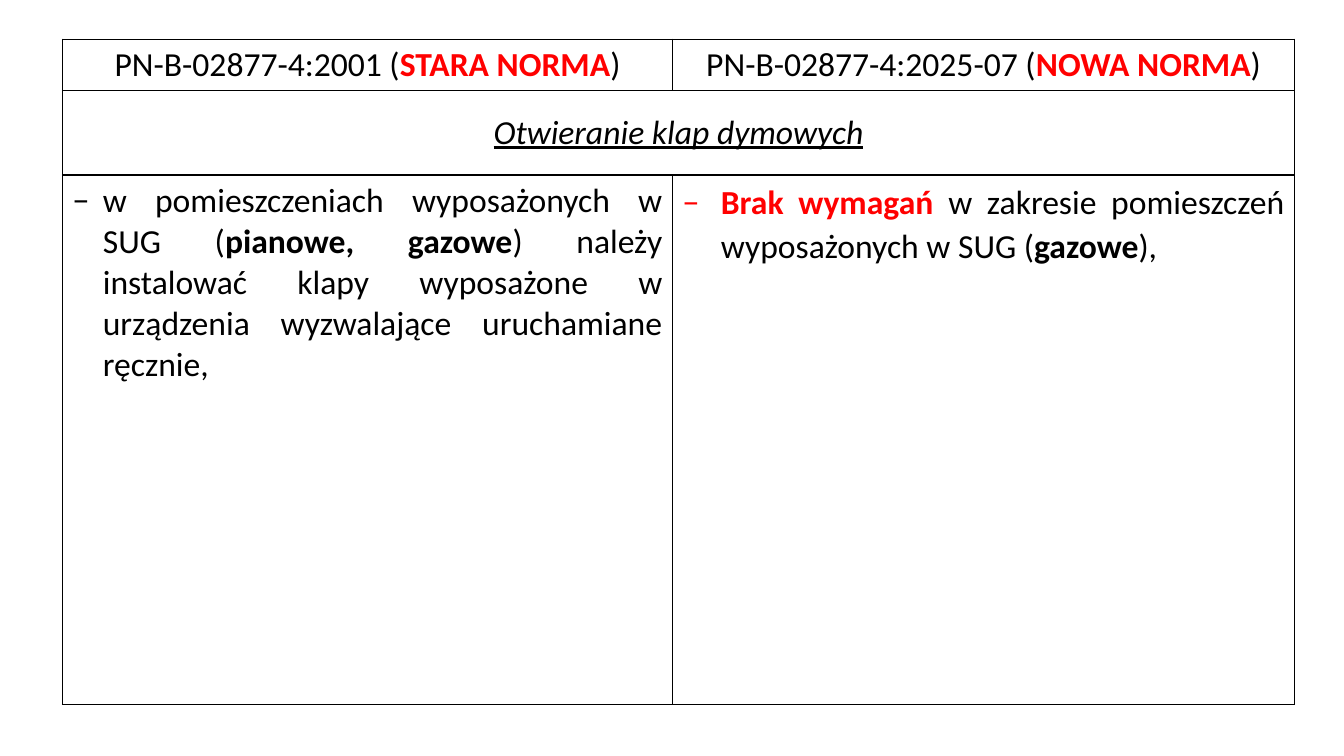
import pptx
import pptx.util
import pptx.dml.color
import pptx.enum.text
import pptx.oxml.ns
from dataclasses import dataclass
from lxml import etree

Inches = pptx.util.Inches
Pt = pptx.util.Pt
ALIGN = pptx.enum.text.PP_ALIGN
ANCHOR = pptx.enum.text.MSO_ANCHOR


@dataclass(frozen=True)
class Theme:
    font: str = "Calibri"
    size: int = 24
    ink: str = "000000"
    accent: str = "FF0000"
    border: int = 1


THEME = Theme()

STANDARDS = [
    [("PN-B-02877-4:2001 (", ""), ("STARA NORMA", "accent bold"), (")", "")],
    [("PN-B-02877-4:2025-07 (", ""), ("NOWA NORMA", "accent bold"), (")", "")],
]
TOPIC = [("Otwieranie klap dymowych", "italic underline")]
REQUIREMENTS = [
    {
        "runs": [
            ("w pomieszczeniach wyposażonych w SUG (", ""),
            ("pianowe, gazowe", "bold"),
            (") należy instalować klapy wyposażone w urządzenia "
             "wyzwalające uruchamiane ręcznie,", ""),
        ],
        "indent": 0.3, "line_spacing": None, "space_after": None,
    },
    {
        "runs": [
            ("Brak wymagań ", "accent bold"),
            ("w zakresie pomieszczeń wyposażonych w SUG (", ""),
            ("gazowe", "bold"),
            ("),", ""),
        ],
        "indent": 0.38, "line_spacing": 1.07, "space_after": 8,
    },
]
BULLET = "−"
LEFT, TOP = 0.62, 0.39
COLUMN_WIDTHS = [6.05, 6.17]
ROW_HEIGHTS = [0.5, 0.84, 5.25]


def add_element(parent, tag, **attributes):
    return etree.SubElement(parent, pptx.oxml.ns.qn(tag), attributes)


def style_cell(cell):
    properties = cell._tc.get_or_add_tcPr()
    for side in ("a:lnL", "a:lnR", "a:lnT", "a:lnB"):
        line = add_element(properties, side, w=str(Pt(THEME.border)))
        add_element(add_element(line, "a:solidFill"), "a:srgbClr", val=THEME.ink)
    cell.fill.background()


def write_runs(cell, runs, align, anchor):
    cell.vertical_anchor = anchor
    paragraph = cell.text_frame.paragraphs[0]
    paragraph.alignment = align
    for words, style in runs:
        run = paragraph.add_run()
        run.text = words
        font = run.font
        font.name, font.size = THEME.font, Pt(THEME.size)
        font.bold = "bold" in style
        font.italic = "italic" in style
        font.underline = "underline" in style
        color = THEME.accent if "accent" in style else THEME.ink
        font.color.rgb = pptx.dml.color.RGBColor.from_string(color)
    return paragraph


def add_bullet(paragraph, indent):
    properties = paragraph._p.get_or_add_pPr()
    properties.set("marL", str(Inches(indent)))
    properties.set("indent", str(-Inches(indent)))
    add_element(properties, "a:buFont", typeface=THEME.font)
    add_element(properties, "a:buChar", char=BULLET)


def main():
    deck = pptx.Presentation()
    deck.slide_width, deck.slide_height = Inches(13.33), Inches(7.5)
    slide = deck.slides.add_slide(deck.slide_layouts[6])
    comparison = slide.shapes.add_table(
        len(ROW_HEIGHTS), len(COLUMN_WIDTHS), Inches(LEFT), Inches(TOP),
        Inches(sum(COLUMN_WIDTHS)), Inches(sum(ROW_HEIGHTS))).table
    comparison.first_row = comparison.horz_banding = False
    for column, width in zip(comparison.columns, COLUMN_WIDTHS):
        column.width = Inches(width)
    for row, height in zip(comparison.rows, ROW_HEIGHTS):
        row.height = Inches(height)
    for cell in comparison.iter_cells():
        style_cell(cell)

    for index, runs in enumerate(STANDARDS):
        write_runs(comparison.cell(0, index), runs, ALIGN.CENTER, ANCHOR.MIDDLE)

    topic = comparison.cell(1, 0)
    topic.merge(comparison.cell(1, 1))
    write_runs(topic, TOPIC, ALIGN.CENTER, ANCHOR.MIDDLE)

    for index, requirement in enumerate(REQUIREMENTS):
        paragraph = write_runs(comparison.cell(2, index), requirement["runs"],
                               ALIGN.JUSTIFY, ANCHOR.TOP)
        if requirement["line_spacing"]:
            paragraph.line_spacing = requirement["line_spacing"]
            paragraph.space_after = Pt(requirement["space_after"])
        add_bullet(paragraph, requirement["indent"])

    deck.save("out.pptx")


if __name__ == "__main__":
    main()
